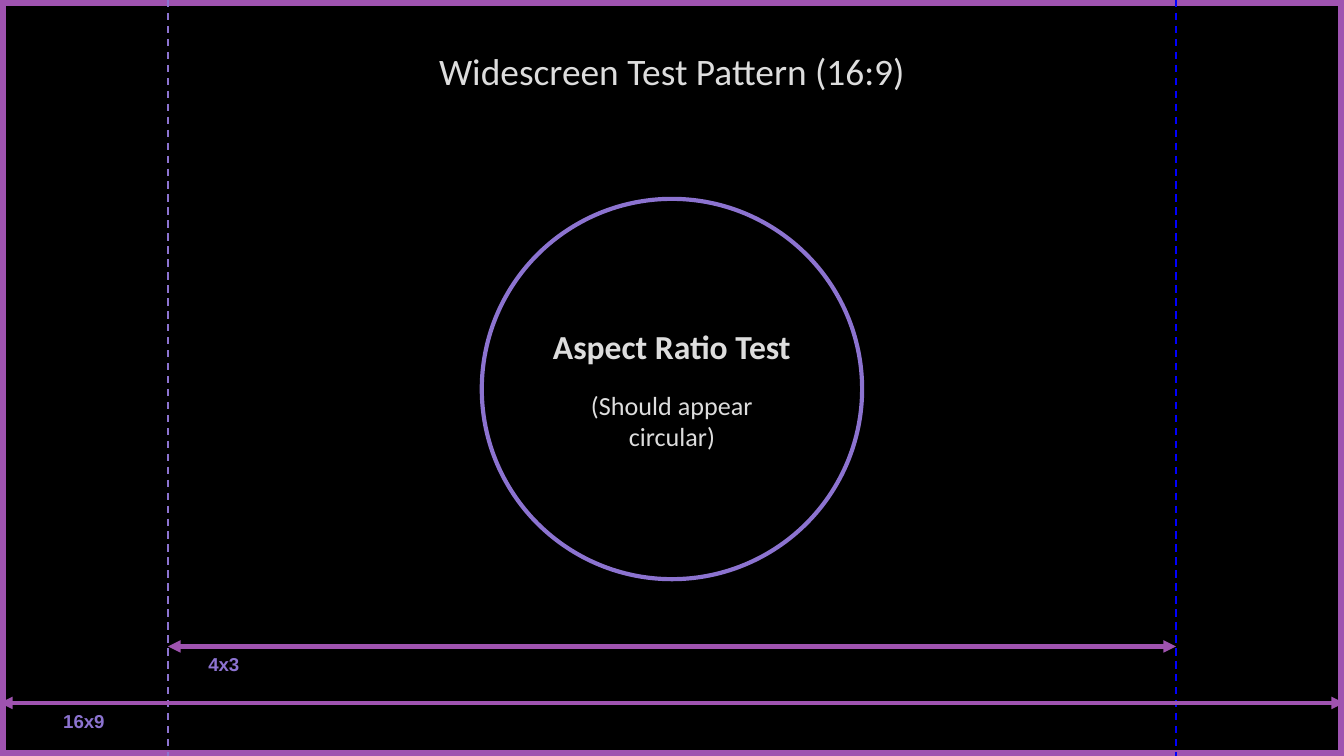
from pptx import Presentation
from pptx.dml.color import RGBColor
from pptx.enum.dml import MSO_LINE
from pptx.enum.shapes import MSO_CONNECTOR, MSO_SHAPE
from pptx.enum.text import MSO_ANCHOR, PP_ALIGN
from pptx.oxml.ns import qn
from pptx.util import Inches, Pt
from lxml.etree import SubElement

WIDE = 10
HIGH = WIDE * 9 / 16
PURPLE, VIOLET, BLUE, PALE = "9F53B0", "8C73D0", "0000FF", "DDDDDD"


def paint(color, value):
    """Set a colour from a hex string."""
    color.rgb = RGBColor.from_string(value)


def style(para, size, font, color, bold=False):
    """Format every run of a paragraph."""
    for run in para.runs:
        run.font.size, run.font.name, run.font.bold = Pt(size), font, bold
        paint(run.font.color, color)


def add_ring(slide, kind, box, color, width):
    """Add an unfilled outline shape in the given box."""
    ring = slide.shapes.add_shape(kind, *map(Inches, box))
    ring.shadow.inherit = False
    ring.fill.background()
    paint(ring.line.color, color)
    ring.line.width = Pt(width)
    return ring


def add_rule(slide, start, end, color, width):
    """Add a straight line without a shadow."""
    rule = slide.shapes.add_connector(
        MSO_CONNECTOR.STRAIGHT, *map(Inches, start + end))
    SubElement(rule._element.spPr, qn("a:effectLst"))
    paint(rule.line.color, color)
    rule.line.width = Pt(width)
    return rule


def add_title(slide, box):
    """Place the slide title in the given box."""
    title = slide.shapes.title
    title.left, title.top, title.width, title.height = map(Inches, box)
    frame = title.text_frame
    frame.text = "Widescreen Test Pattern (16:9)"
    frame.vertical_anchor = MSO_ANCHOR.TOP
    para = frame.paragraphs[0]
    para.alignment = PP_ALIGN.CENTER
    style(para, 20, "Calibri", PALE)


def add_guide(slide, x, color):
    """Add a dashed vertical guide over the full height."""
    guide = add_rule(slide, (x, 0), (x, HIGH), color, 1)
    guide.line.dash_style = MSO_LINE.DASH


def add_span(slide, left, right, y, name, inset):
    """Add a double arrow with its label below the left end."""
    arrow = add_rule(slide, (left, y), (right, y), PURPLE, 2.25)
    line = arrow.line._get_or_add_ln()
    for end in ("a:headEnd", "a:tailEnd"):
        SubElement(line, qn(end), type="triangle")
    label = slide.shapes.add_textbox(
        *map(Inches, (left + inset, y, 0.58, 0.27)))
    frame = label.text_frame
    frame.word_wrap = True
    frame.margin_left = frame.margin_right = Inches(0.05)
    frame.margin_top = frame.margin_bottom = Inches(0.05)
    frame.text = name
    style(frame.paragraphs[0], 10, "Arial", VIOLET, True)


def add_circle(slide, box):
    """Add the test circle with its heading and note."""
    circle = add_ring(slide, MSO_SHAPE.OVAL, box, VIOLET, 2.25)
    frame = circle.text_frame
    frame.word_wrap = True
    frame.vertical_anchor = MSO_ANCHOR.MIDDLE
    frame.text = "Aspect Ratio Test\n(Should appear circular)"
    head, note = frame.paragraphs
    head.alignment = note.alignment = PP_ALIGN.CENTER
    note.space_before = Pt(12)
    style(head, 18, "Calibri", PALE, True)
    style(note, 14, "Calibri", PALE)


def build():
    """Build and save the test pattern slide."""
    deck = Presentation()
    deck.slide_width, deck.slide_height = Inches(WIDE), Inches(HIGH)
    slide = deck.slides.add_slide(deck.slide_layouts[5])
    fill = slide.background.fill
    fill.solid()
    paint(fill.fore_color, "000000")

    near = WIDE / 8
    far = WIDE - near
    size = 2.83
    add_ring(slide, MSO_SHAPE.RECTANGLE, (0, 0, WIDE, HIGH), PURPLE, 6)
    add_title(slide, (0.75, 0.31, 8.5, 0.92))
    add_guide(slide, near, VIOLET)
    add_guide(slide, far, BLUE)
    add_span(slide, 0, WIDE, 5.23, "16x9", 0.42)
    add_circle(slide, ((WIDE - size) / 2, 1.48, size, size))
    add_span(slide, near, far, 4.81, "4x3", 0.25)
    deck.save("out.pptx")


if __name__ == "__main__":
    build()
